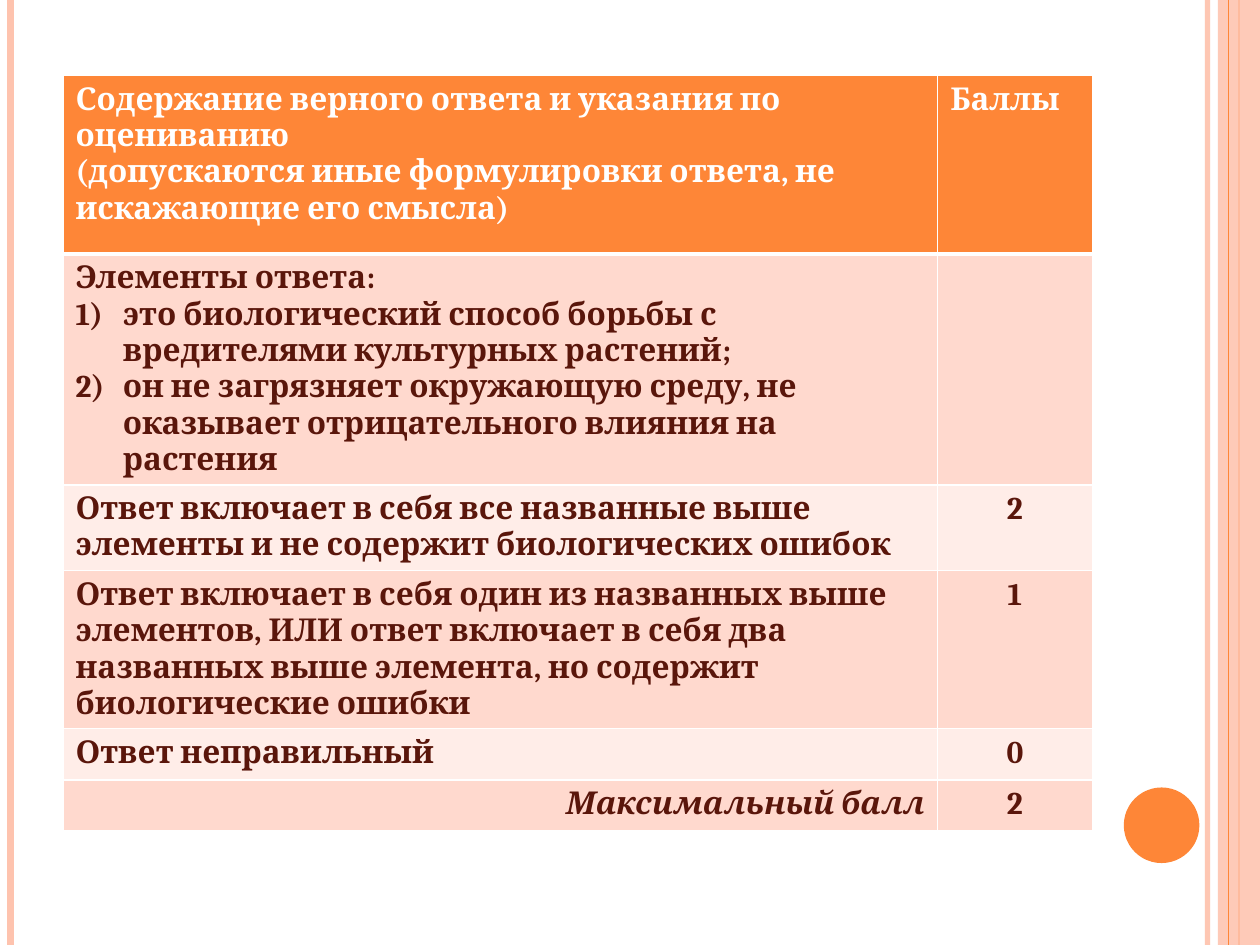
from dataclasses import dataclass

from pptx import Presentation
from pptx.dml.color import RGBColor
from pptx.enum.shapes import MSO_CONNECTOR as Connector, MSO_SHAPE as Shape
from pptx.enum.text import PP_ALIGN as Align
from pptx.oxml.ns import qn
from pptx.util import Pt
from lxml.etree import SubElement, fromstring

DRAWING_NS = "http://schemas.openxmlformats.org/drawingml/2006/main"
PAGE_WIDTH, PAGE_HEIGHT = 720, 540


@dataclass(frozen=True)
class Theme:
    font: str = "Cambria"
    size: float = 18
    orange: str = "FE8637"
    peach: str = "FEC3AE"
    white: str = "FFFFFF"
    text: str = "5A160B"
    bands: tuple = ("FFD9CE", "FFEDE8")


THEME = Theme()

# Each row: height, criterion paragraphs, score
ROWS = [
    (102, ["Содержание верного ответа и указания по оцениванию",
           "(допускаются иные формулировки ответа, не искажающие его смысла)"], "Баллы"),
    (131.6, ["Элементы ответа:",
             "это биологический способ борьбы с вредителями культурных растений;",
             "он не загрязняет окружающую среду, не оказывает отрицательного "
             "влияния на растения"], ""),
    (49, ["Ответ включает в себя все названные выше элементы и не содержит "
          "биологических ошибок"], "2"),
    (90, ["Ответ включает в себя один из названных выше элементов, ИЛИ ответ "
          "включает в себя два названных выше элемента, но содержит "
          "биологические ошибки"], "1"),
    (29.2, ["Ответ неправильный"], "0"),
    (29.2, ["Максимальный балл"], "2"),
]
ELEMENTS_ROW, TOTAL_ROW = 1, len(ROWS) - 1


def paint(fill, color, opacity=100):
    fill.solid()
    fill.fore_color.rgb = RGBColor.from_string(color)
    if opacity < 100:
        color_node = fill._xPr.find(qn("a:solidFill"))[0]
        SubElement(color_node, qn("a:alpha")).set("val", str(opacity * 1000))


def add_stripe(page, x, color, width, opacity=100):
    """Vertical line over the full page height."""
    line = page.shapes.add_connector(Connector.STRAIGHT, Pt(x), Pt(0), Pt(x), Pt(PAGE_HEIGHT))
    line.line.width = Pt(width)
    paint(line.line.fill, color, opacity)
    SubElement(line._element.spPr, qn("a:effectLst"))


def add_plain_shape(page, kind, left, top, width, height, color, opacity=100):
    shape = page.shapes.add_shape(kind, Pt(left), Pt(top), Pt(width), Pt(height))
    shape.shadow.inherit = False
    shape.line.fill.background()
    paint(shape.fill, color, opacity)


def set_borders(cell, top, bottom):
    """White borders; they must come before the fill in the cell properties."""
    properties = cell._tc.get_or_add_tcPr()
    sides = {"lnL": 1, "lnR": 1, "lnT": top, "lnB": bottom}
    for index, (side, width) in enumerate(sides.items()):
        properties.insert(index, fromstring(
            f'<a:{side} xmlns:a="{DRAWING_NS}" w="{Pt(width)}"><a:solidFill>'
            f'<a:srgbClr val="{THEME.white}"/></a:solidFill></a:{side}>'))


def number_paragraph(para):
    properties = para._p.get_or_add_pPr()
    properties.set("marL", str(Pt(27)))
    properties.set("indent", str(Pt(-27)))
    SubElement(properties, qn("a:buFont")).set("typeface", "+mj-lt")
    SubElement(properties, qn("a:buAutoNum")).set("type", "arabicParenR")


def write_cell(cell, texts, color, align, italic=False, numbered=False):
    frame = cell.text_frame
    for index, text in enumerate(texts):
        para = frame.add_paragraph() if index else frame.paragraphs[0]
        para.alignment = align
        if numbered and index:
            number_paragraph(para)
        if not text:
            continue
        span = para.add_run()
        span.text = text
        font = span.font
        font.name, font.size = THEME.font, Pt(THEME.size)
        font.bold, font.italic = True, italic
        font.color.rgb = RGBColor.from_string(color)


def add_score_table(page):
    widths = (499.7, 88.5)
    total_height = sum(height for height, *_ in ROWS)
    table = page.shapes.add_table(len(ROWS), len(widths), Pt(36), Pt(43.2),
                                  Pt(sum(widths)), Pt(total_height)).table
    for column, width in zip(table.columns, widths):
        column.width = Pt(width)

    for number, (height, criterion, score) in enumerate(ROWS):
        header, total = number == 0, number == TOTAL_ROW
        table.rows[number].height = Pt(height)
        fill = THEME.orange if header else THEME.bands[(number - 1) % 2]
        color = THEME.white if header else THEME.text
        left, right = table.cell(number, 0), table.cell(number, 1)
        for cell in (left, right):
            paint(cell.fill, fill)
            set_borders(cell, top=3 if number == 1 else 1, bottom=3 if header else 1)
        write_cell(left, criterion, color, Align.RIGHT if total else Align.LEFT,
                   italic=total, numbered=number == ELEMENTS_ROW)
        write_cell(right, [score], color, Align.LEFT if header else Align.CENTER)


def main():
    deck = Presentation()
    deck.slide_width, deck.slide_height = Pt(PAGE_WIDTH), Pt(PAGE_HEIGHT)
    page = deck.slides.add_slide(deck.slide_layouts[6])
    paint(page.background.fill, THEME.white)

    # Side decoration
    add_stripe(page, 690, THEME.peach, 3, opacity=93)
    add_stripe(page, 6, THEME.peach, 4.5)
    add_stripe(page, 708, THEME.orange, 1.5)
    add_plain_shape(page, Shape.RECTANGLE, 696, 0, 24, PAGE_HEIGHT, THEME.peach, opacity=87)
    add_stripe(page, 702, THEME.orange, 0.75)
    add_plain_shape(page, Shape.OVAL, 642.2, 450, 43.2, 43.2, THEME.orange)

    # Scoring criteria
    add_score_table(page)
    deck.save("out.pptx")


if __name__ == "__main__":
    main()
